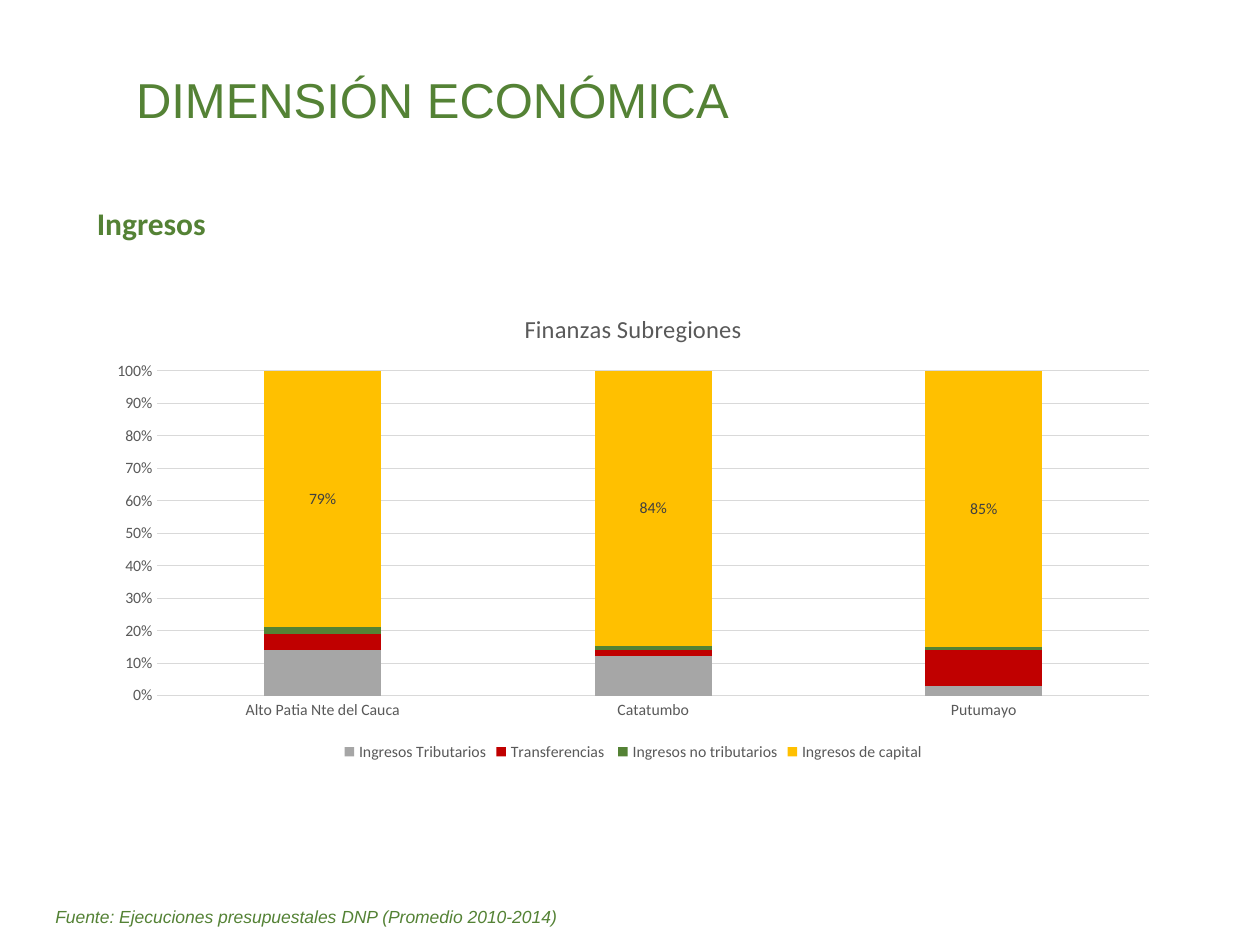
from pptx import Presentation
from pptx.chart.data import CategoryChartData
from pptx.dml.color import RGBColor
from pptx.enum.chart import (XL_CHART_TYPE as ChartType, XL_LABEL_POSITION as LabelPosition,
                             XL_LEGEND_POSITION as LegendPosition, XL_TICK_MARK as TickMark)
from pptx.enum.text import MSO_ANCHOR as Anchor, PP_ALIGN as Align
from pptx.util import Inches, Pt

GREEN, GRAY, DARK, GRID = "548235", "595959", "404040", "D9D9D9"

CATEGORIES = ["Alto Patia Nte del Cauca", "Catatumbo", "Putumayo"]
SERIES = [
    ("Ingresos Tributarios", "A6A6A6", (0.14, 0.12, 0.03)),
    ("Transferencias ", "C00000", (0.05, 0.02, 0.11)),
    ("Ingresos no tributarios", GREEN, (0.02, 0.01, 0.01)),
    ("Ingresos de capital", "FFC000", (0.79, 0.84, 0.85)),
]


def color(hex_value):
    return RGBColor.from_string(hex_value)


def set_font(font, hex_value, **values):
    for name, value in values.items():
        setattr(font, name, value)
    font.color.rgb = color(hex_value)


class SlideBuilder:
    heading_font = "Arial"
    body_font = "Calibri"

    def __init__(self, presentation):
        self.slide = presentation.slides.add_slide(presentation.slide_layouts[5])

    def fill_text(self, shape, text, **font_values):
        frame = shape.text_frame
        frame.word_wrap = True
        paragraph = frame.paragraphs[0]
        paragraph.alignment = Align.LEFT
        run = paragraph.add_run()
        run.text = text
        set_font(run.font, GREEN, **font_values)

    def title(self, text, left, top, width, height):
        shape = self.slide.shapes.title
        box = {"left": left, "top": top, "width": width, "height": height}
        for name, value in box.items():
            setattr(shape, name, Inches(value))
        shape.text_frame.vertical_anchor = Anchor.MIDDLE
        self.fill_text(shape, text, size=Pt(28), name=self.heading_font)

    def text(self, text, left, top, width, height, **font_values):
        shape = self.slide.shapes.add_textbox(*map(Inches, (left, top, width, height)))
        self.fill_text(shape, text, **font_values)

    def stacked_chart(self, title, left, top, width, height):
        data = CategoryChartData(number_format="0%")
        data.categories = CATEGORIES
        for name, _, values in SERIES:
            data.add_series(name, values)
        chart = self.slide.shapes.add_chart(
            ChartType.COLUMN_STACKED_100, *map(Inches, (left, top, width, height)), data).chart
        set_font(chart.font, "000000", size=Pt(10), name=self.body_font)
        self.chart_title(chart, title)
        self.axes(chart)
        self.columns(chart.plots[0])

        chart.has_legend = True
        chart.legend.position = LegendPosition.BOTTOM
        chart.legend.include_in_layout = False
        set_font(chart.legend.font, GRAY, size=Pt(9), name=self.body_font)

    def chart_title(self, chart, text):
        chart.has_title = True
        chart.chart_title.include_in_layout = False
        run = chart.chart_title.text_frame.paragraphs[0].add_run()
        run.text = text
        set_font(run.font, GRAY, size=Pt(14), bold=False, name=self.body_font)

    def axes(self, chart):
        value_axis, category_axis = chart.value_axis, chart.category_axis
        for axis in (value_axis, category_axis):
            axis.major_tick_mark = axis.minor_tick_mark = TickMark.NONE
            set_font(axis.tick_labels.font, GRAY, size=Pt(9), name=self.body_font)
        value_axis.has_major_gridlines = True
        value_axis.maximum_scale = 1
        value_axis.major_unit = 0.1
        value_axis.tick_labels.number_format = "0%"
        value_axis.tick_labels.number_format_is_linked = False
        value_axis.format.line.fill.background()
        for line in (value_axis.major_gridlines.format.line, category_axis.format.line):
            line.color.rgb = color(GRID)
            line.width = Pt(0.75)

    def columns(self, plot):
        plot.gap_width = 182
        plot.overlap = 100
        plot.vary_by_categories = False
        for series, (_, fill, _) in zip(plot.series, SERIES):
            series.format.fill.solid()
            series.format.fill.fore_color.rgb = color(fill)
        labels = plot.series[-1].data_labels
        label_values = {"show_value": True, "position": LabelPosition.CENTER,
                        "number_format": "0%", "number_format_is_linked": False}
        for name, value in label_values.items():
            setattr(labels, name, value)
        set_font(labels.font, DARK, size=Pt(9), name=self.body_font)


def main():
    presentation = Presentation()
    presentation.slide_width, presentation.slide_height = Inches(10), Inches(7.5)
    builder = SlideBuilder(presentation)
    builder.title("DIMENSIÓN ECONÓMICA", 0.98, 0.26, 8.66, 1.05)
    builder.text("Ingresos", 0.67, 1.57, 4.48, 0.4,
                 size=Pt(18), bold=True, name=builder.body_font)
    builder.stacked_chart("Finanzas Subregiones", 0.76, 2.31, 8.53, 3.77)
    builder.text("Fuente: Ejecuciones presupuestales DNP (Promedio 2010-2014)",
                 0.34, 7.14, 9.29, 0.27, size=Pt(10), italic=True, name=builder.heading_font)
    presentation.save("out.pptx")


if __name__ == "__main__":
    main()
